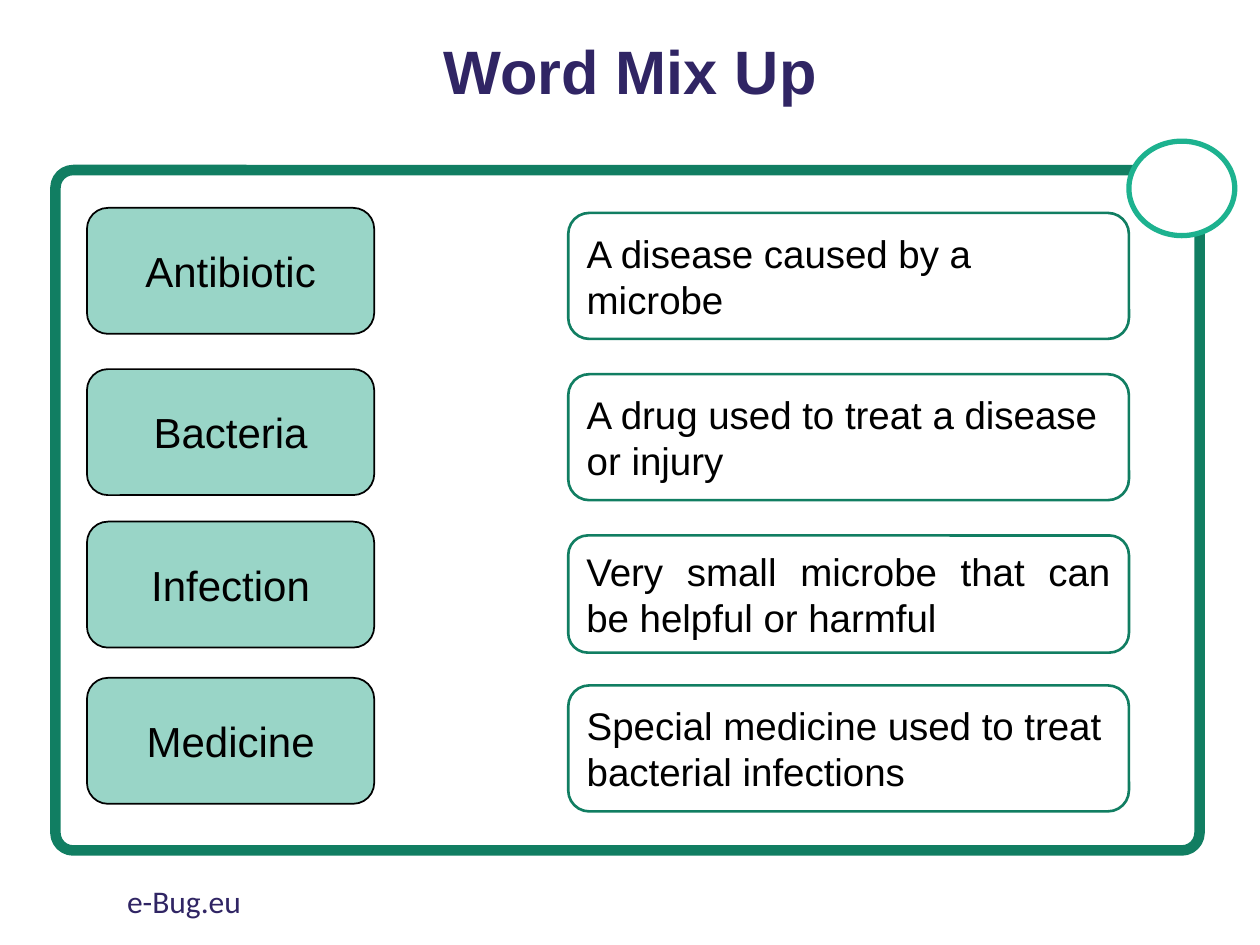
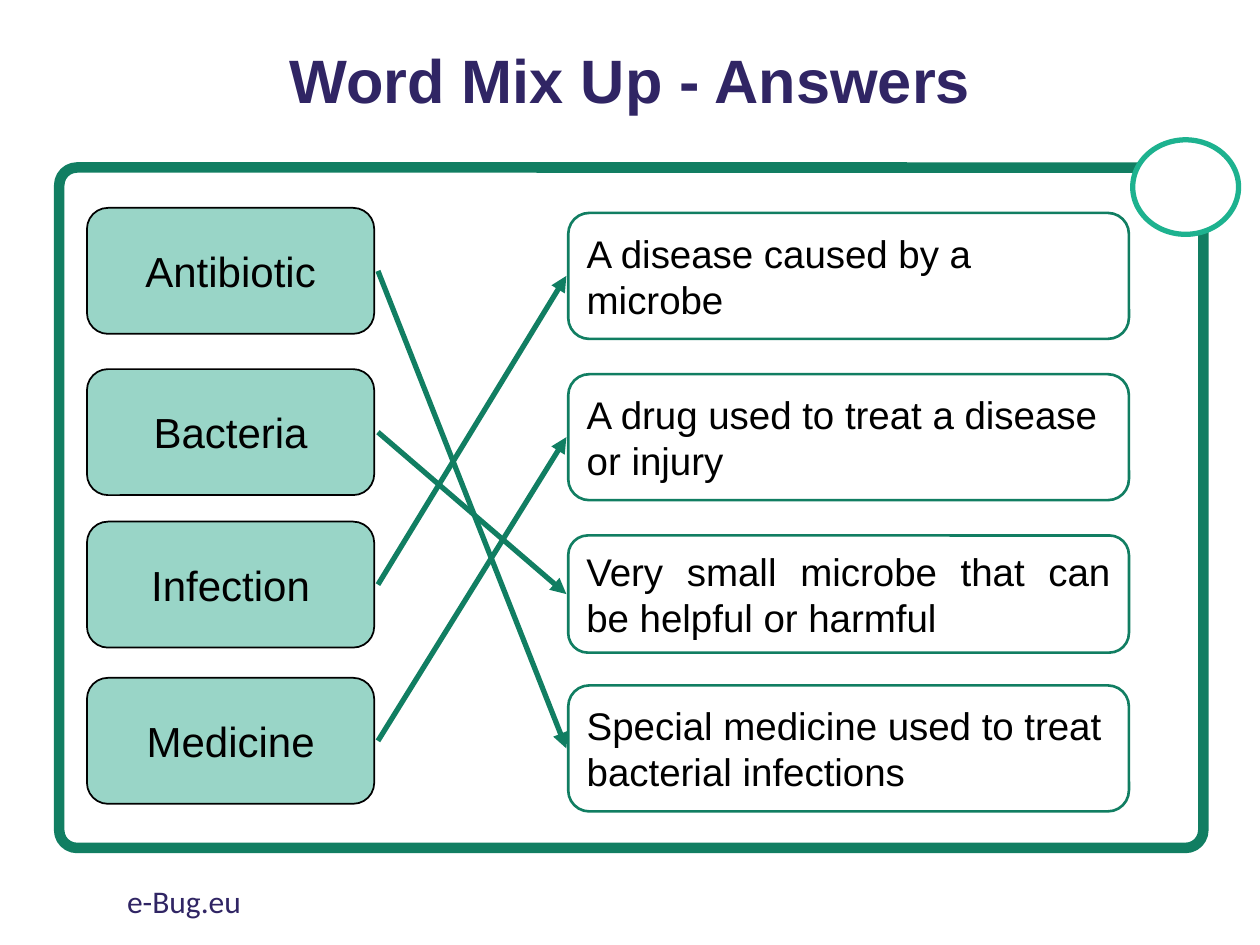
from lxml import etree
from pptx import Presentation
from pptx.dml.color import RGBColor
from pptx.enum.shapes import MSO_CONNECTOR, MSO_SHAPE
from pptx.enum.text import MSO_ANCHOR, MSO_AUTO_SIZE, PP_ALIGN
from pptx.oxml.ns import qn
from pptx.util import Inches, Pt

ROUNDED, OVAL = MSO_SHAPE.ROUNDED_RECTANGLE, MSO_SHAPE.OVAL
STRAIGHT = MSO_CONNECTOR.STRAIGHT
LEFT, CENTER, JUSTIFY = PP_ALIGN.LEFT, PP_ALIGN.CENTER, PP_ALIGN.JUSTIFY
MIDDLE, NO_FIT = MSO_ANCHOR.MIDDLE, MSO_AUTO_SIZE.NONE

NAVY, GREEN, TEAL, MINT = "302564", "117E62", "1DB28F", "99D5C7"
BLACK, WHITE = "000000", "FFFFFF"

SLIDES = [
    {"title": "Word Mix Up", "title_top": 0.08,
     "frame": (0.44, 1.35), "badge": (8.96, 1.12), "answers": False},
    {"title": "Word Mix Up - Answers", "title_top": 0.15,
     "frame": (0.47, 1.33), "badge": (8.99, 1.11), "answers": True},
]
TERMS = [("Antibiotic", 1.65), ("Bacteria", 2.93), ("Infection", 4.14), ("Medicine", 5.38)]
MEANINGS = [
    ("A disease caused by a microbe", 1.69, 1, LEFT),
    ("A drug used to treat a disease or injury", 2.97, 1, LEFT),
    ("Very small microbe that can be helpful or harmful", 4.25, 0.93, JUSTIFY),
    ("Special medicine used to treat bacterial infections", 5.44, 1, LEFT),
]
ANSWERS = {"Antibiotic": 3, "Bacteria": 2, "Infection": 0, "Medicine": 1}
FOOTER = "e-Bug.eu"

TERM_LEFT, TERM_WIDTH, TERM_HEIGHT = 0.69, 2.28, 1
MEANING_LEFT, MEANING_WIDTH = 4.51, 4.45
ARROW_GAP = 0.03


def color(value):
    return RGBColor.from_string(value)


def inches(*lengths):
    return [Inches(length) for length in lengths]


def write(shape, text, size, ink=BLACK, font="Arial", align=LEFT, bold=False):
    frame = shape.text_frame
    frame.text = text
    frame.word_wrap = True
    frame.auto_size = NO_FIT
    para = frame.paragraphs[0]
    para.alignment = align
    for span in para.runs:
        span.font.name = font
        span.font.size = Pt(size)
        span.font.bold = bold
        span.font.color.rgb = color(ink)
    return para


def add_outline(page, kind, place, line, width, fill=None):
    shape = page.shapes.add_shape(kind, *inches(*place))
    shape.shadow.inherit = False
    shape.line.color.rgb = color(line)
    shape.line.width = Pt(width)
    if fill:
        shape.fill.solid()
        shape.fill.fore_color.rgb = color(fill)
    else:
        shape.fill.background()
    return shape


def add_card(page, text, place, size, align, line, width, fill=None):
    card = add_outline(page, ROUNDED, place, line, width, fill)
    write(card, text, size, align=align)
    card.text_frame.vertical_anchor = MIDDLE


def add_arrow(page, start, end):
    arrow = page.shapes.add_connector(STRAIGHT, *inches(*start, *end))
    arrow.line.color.rgb = color(GREEN)
    arrow.line.width = Pt(3)
    etree.SubElement(arrow.line._get_or_add_ln(), qn("a:tailEnd"), type="triangle")
    etree.SubElement(arrow._element.spPr, qn("a:effectLst"))


def add_title(page, text, top):
    title = page.shapes.title
    title.left, title.top, title.width, title.height = inches(0.69, top, 8.62, 1.03)
    write(title, text, 35, NAVY, align=CENTER, bold=True).line_spacing = 0.9
    title.text_frame.vertical_anchor = MIDDLE


def add_cards(page):
    for (term, term_top), (meaning, top, height, align) in zip(TERMS, MEANINGS):
        add_card(page, term, (TERM_LEFT, term_top, TERM_WIDTH, TERM_HEIGHT),
                 24, CENTER, BLACK, 1, MINT)
        add_card(page, meaning, (MEANING_LEFT, top, MEANING_WIDTH, height),
                 22, align, GREEN, 1.5)


def add_answers(page):
    for term, term_top in TERMS:
        meaning, top, height, align = MEANINGS[ANSWERS[term]]
        start = (TERM_LEFT + TERM_WIDTH + ARROW_GAP, term_top + TERM_HEIGHT / 2)
        add_arrow(page, start, (MEANING_LEFT - ARROW_GAP / 2, top + height / 2))


def add_page(deck, content):
    page = deck.slides.add_slide(deck.slide_layouts[5])
    page.background.fill.solid()
    page.background.fill.fore_color.rgb = color(WHITE)
    add_title(page, content["title"], content["title_top"])
    frame = add_outline(page, ROUNDED, (*content["frame"], 9.08, 5.4), GREEN, 6)
    frame.adjustments[0] = 0.026
    add_outline(page, OVAL, (*content["badge"], 0.84, 0.75), TEAL, 3, WHITE)
    add_cards(page)
    if content["answers"]:
        add_answers(page)
    footer = page.shapes.add_textbox(*inches(0.91, 6.95, 3.38, 0.4))
    write(footer, FOOTER, 18, NAVY, "Calibri")


def main():
    deck = Presentation()
    deck.slide_width, deck.slide_height = inches(10, 7.5)
    for content in SLIDES:
        add_page(deck, content)
    deck.save("out.pptx")


if __name__ == "__main__":
    main()
